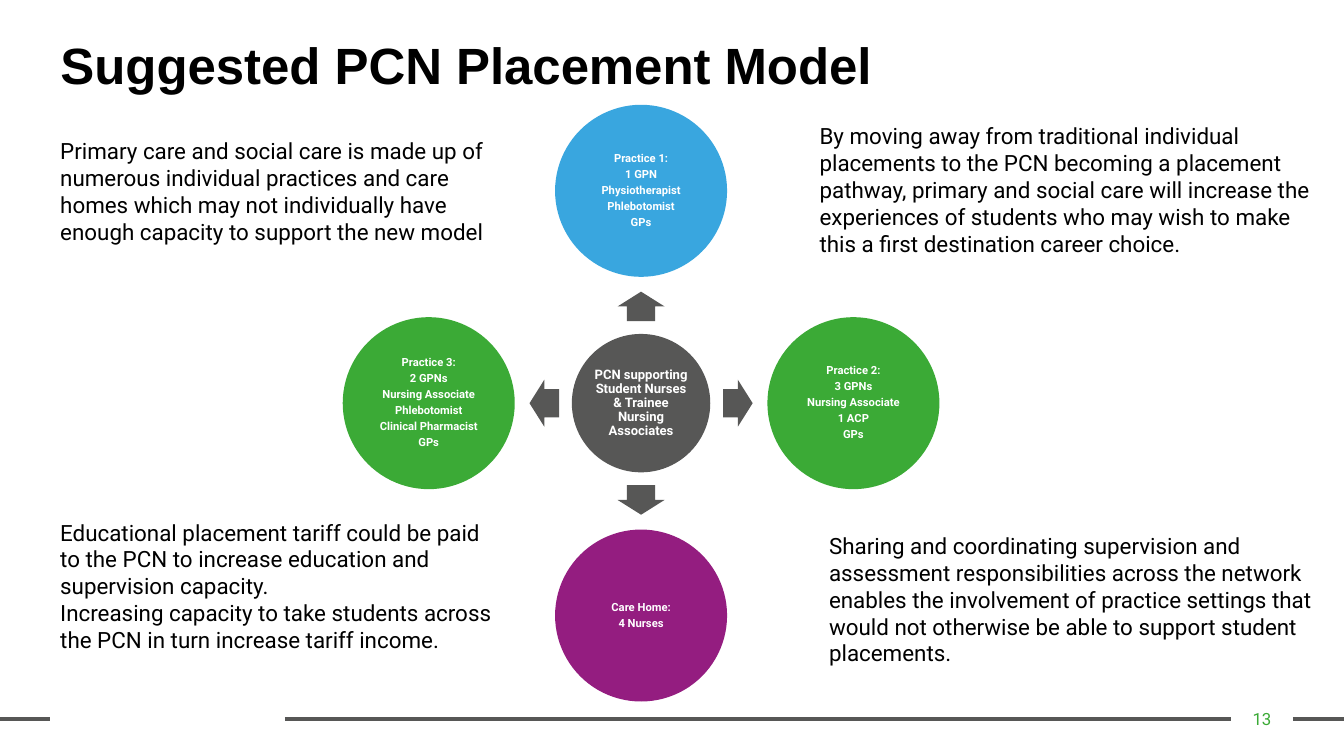
from pptx import Presentation
from pptx.dml.color import RGBColor
from pptx.enum.shapes import MSO_CONNECTOR, MSO_SHAPE
from pptx.enum.text import MSO_ANCHOR, MSO_AUTO_SIZE, PP_ALIGN
from pptx.oxml.ns import qn
from pptx.util import Inches, Pt
from lxml.etree import SubElement

BLACK = RGBColor(0x00, 0x00, 0x00)
WHITE = RGBColor(0xFF, 0xFF, 0xFF)
GREY = RGBColor(0x57, 0x57, 0x56)
GREEN = RGBColor(0x3B, 0xAA, 0x36)
BLUE = RGBColor(0x39, 0xA6, 0xDF)
PURPLE = RGBColor(0x94, 0x1D, 0x80)

WIDE = 10
HIGH = WIDE * 9 / 16
MID_X, MID_Y = 4.77, 3.0
HUB, NODE = 1.03, 1.28
REACH, GAP = 1.58, 0.72


class Page:
    face = "Roboto"

    def __init__(self, slide):
        self.slide = slide
        self.shapes = slide.shapes

    def style(self, para, size, color, bold=False, face=None):
        font = para.font
        font.name = face or self.face
        font.size = Pt(size)
        font.bold = bold
        font.color.rgb = color

    def title(self, text, left, top, width, height):
        shape = self.shapes.title
        shape.left, shape.top = Inches(left), Inches(top)
        shape.width, shape.height = Inches(width), Inches(height)
        frame = shape.text_frame
        frame.text = text
        frame.auto_size = MSO_AUTO_SIZE.NONE
        frame.vertical_anchor = MSO_ANCHOR.TOP
        para = frame.paragraphs[0]
        para.alignment = PP_ALIGN.LEFT
        para.line_spacing = 0.9
        self.style(para, 27.3, BLACK, True, "Arial")

    def text(self, text, left, top, width, height, size=12, color=BLACK):
        box = self.shapes.add_textbox(
            Inches(left), Inches(top), Inches(width), Inches(height))
        frame = box.text_frame
        frame.word_wrap = True
        frame.text = text
        for para in frame.paragraphs:
            self.style(para, size, color)
        return frame

    def number(self, text, left, top, width, height):
        frame = self.text(text, left, top, width, height, 9, GREEN)
        frame.margin_left = frame.margin_right = Inches(0.07)
        frame.margin_top = frame.margin_bottom = Inches(0.04)
        frame.vertical_anchor = MSO_ANCHOR.MIDDLE
        frame.paragraphs[0].alignment = PP_ALIGN.CENTER

    def rule(self, start, end, y):
        line = self.shapes.add_connector(
            MSO_CONNECTOR.STRAIGHT,
            Inches(start), Inches(y), Inches(end), Inches(y))
        line.line.color.rgb = GREY
        line.line.width = Pt(2.25)
        SubElement(line._element.spPr, qn("a:effectLst"))

    def shape(self, kind, x, y, width, height, color):
        shape = self.shapes.add_shape(
            kind, Inches(x - width / 2), Inches(y - height / 2),
            Inches(width), Inches(height))
        shape.shadow.inherit = False
        shape.fill.solid()
        shape.fill.fore_color.rgb = color
        shape.line.fill.background()
        return shape

    def circle(self, text, x, y, width, color, size):
        shape = self.shape(MSO_SHAPE.OVAL, x, y, width, width, color)
        frame = shape.text_frame
        frame.word_wrap = True
        frame.margin_left = frame.margin_right = Inches(0.01)
        frame.margin_top = frame.margin_bottom = Inches(0.01)
        frame.vertical_anchor = MSO_ANCHOR.MIDDLE
        frame.text = text
        for para in frame.paragraphs:
            para.alignment = PP_ALIGN.CENTER
            para.line_spacing = 0.9
            para.space_after = Pt(size * 0.35)
            self.style(para, size, WHITE, True)

    def arrow(self, x, y, turn):
        shape = self.shape(MSO_SHAPE.RIGHT_ARROW, x, y, 0.22, 0.35, GREY)
        shape.adjustments[0] = 0.6
        shape.adjustments[1] = 0.5
        shape.rotation = turn


NOTES = [
    ("Primary care and social care is made up of numerous individual practices "
     "and care homes which may not individually have enough capacity to support "
     "the new model", 0.35, 0.97, 3.54, 1.11),
    ("Educational placement tariff could be paid to the PCN to increase "
     "education and supervision capacity.\n"
     "Increasing capacity to take students across the PCN in turn increase "
     "tariff income.", 0.35, 3.81, 3.44, 1.31),
    ("By moving away from traditional individual placements to the PCN becoming "
     "a placement pathway, primary and social care will increase the experiences "
     "of students who may wish to make this a first destination career choice.",
     6, 0.86, 4, 1.11),
    ("Sharing and coordinating supervision and assessment responsibilities "
     "across the network enables the involvement of practice settings that "
     "would not otherwise be able to support student placements.",
     6.07, 3.91, 3.85, 1.11),
]

SITES = [
    (0, -1, 270, BLUE,
     "Practice 1:\n1 GPN\nPhysiotherapist\nPhlebotomist\nGPs"),
    (1, 0, 0, GREEN,
     "Practice 2:\n3 GPNs\nNursing Associate\n1 ACP\nGPs"),
    (0, 1, 90, PURPLE, "Care Home:\n4 Nurses"),
    (-1, 0, 180, GREEN,
     "Practice 3:\n2 GPNs\nNursing Associate\nPhlebotomist\n"
     "Clinical Pharmacist\nGPs"),
]


def main():
    deck = Presentation()
    deck.slide_width, deck.slide_height = Inches(WIDE), Inches(HIGH)
    page = Page(deck.slides.add_slide(deck.slide_layouts[5]))

    for start, end in [(0, 0.37), (2.12, 9.16), (9.62, WIDE)]:
        page.rule(start, end, 5.35)
    page.number("13", 9.16, 5.2, 0.46, 0.3)
    page.title("Suggested PCN Placement Model", 0.35, 0.25, 9.3, 0.6)
    for note in NOTES:
        page.text(*note)

    page.circle("PCN supporting Student Nurses & Trainee Nursing Associates",
                MID_X, MID_Y, HUB, GREY, 7)
    for dx, dy, turn, color, text in SITES:
        page.arrow(MID_X + dx * GAP, MID_Y + dy * GAP, turn)
        page.circle(text, MID_X + dx * REACH, MID_Y + dy * REACH,
                    NODE, color, 6)

    deck.save("out.pptx")


if __name__ == "__main__":
    main()
